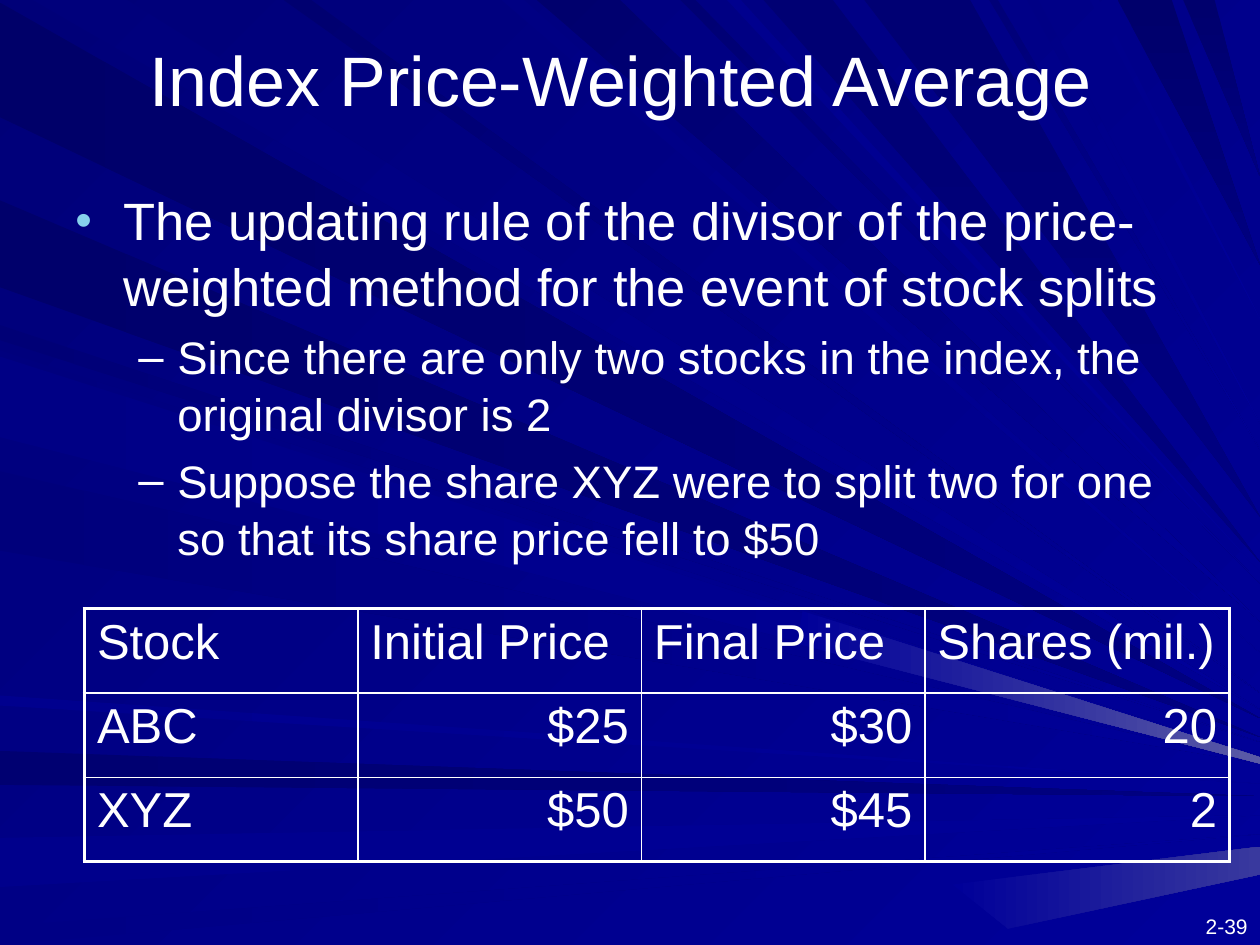
from lxml.etree import SubElement as Sub
from pptx import Presentation
from pptx.dml.color import RGBColor as RGB
from pptx.enum.text import MSO_ANCHOR as Anchor, PP_ALIGN as Align
from pptx.oxml.ns import qn
from pptx.util import Inches, Pt

WHITE, DEEP, BRIGHT = "FFFFFF", "000080", "000099"
WIDE, TALL = 10, 7.5
STEP = 100
BACK = ("000078", BRIGHT, 45)
TITLE = "Index Price-Weighted Average "
NUMBER = "2-39"
POINTS = [
    (0, "The updating rule of the divisor of the price-weighted method for the event of stock splits"),
    (1, "Since there are only two stocks in the index, the original divisor is 2"),
    (1, "Suppose the share XYZ were to split two for one so that its share price fell to $50"),
]
LEVELS = [
    dict(size=30, left=0.38, hang=0.38, mark="•", color="86D1EC", scale=90, gap=0),
    dict(size=26, left=0.81, hang=0.31, mark="–", color=WHITE, scale=100, gap=5.2),
]
STOCKS = [
    ("Stock", "Initial Price", "Final Price", "Shares (mil.)"),
    ("ABC", "$25", "$30", "20"),
    ("XYZ", "$50", "$45", "2"),
]
COLS = [2.17, 2.25, 2.25, 2.42]
ROW = 0.67
THICK, THIN = 2.25, 1

LEFT = [
    ("000069", DEEP, 0.02, 0.93, 5.7),
    ("000071", DEEP, 5.96, 6.23, 6.32),
    ("00008C", BRIGHT, 6.65, 7.04, 6.47),
    ("000085", BRIGHT, 7.35, 7.5, 6.62),
    ("000076", BRIGHT, 2.58, 2.7, 5.89),
    ("00006B", DEEP, 1.59, 2.28, 5.85),
    ("00007E", BRIGHT, 2.78, 3.42, 6),
    ("00007B", BRIGHT, 3.74, 4.37, 6.06),
    ("00008E", BRIGHT, 5.52, 5.6, 6.22),
    ("000085", BRIGHT, 2.83, 3.47, 6.03),
]
TOP = [
    ("00007B", BRIGHT, 0.26, 1.01, 5.63),
    ("000083", BRIGHT, 3.98, 4.16, 5.18),
    ("00006D", BRIGHT, 4.26, 4.92, 4.93),
    ("000073", BRIGHT, 5.4, 5.52, 4.63),
    ("000073", DEEP, 6.06, 6.61, 4.46),
    ("00006B", DEEP, 8.87, 9.3, 2.1),
    ("00006D", DEEP, 9.39, 9.64, 1.4),
    ("000070", BRIGHT, 2.25, 2.47, 5.5),
    ("00008E", BRIGHT, 5.77, 5.88, 4.54),
    ("000073", DEEP, 6.86, 7.7, 4.1),
    ("000078", BRIGHT, 7.85, 7.92, 3.57),
    ("000085", BRIGHT, 8.15, 8.24, 3.36),
    ("00008A", BRIGHT, 8.65, 8.72, 2.53),
]
FLARES = [
    ("39399E", [(7.56, 7.02), (10, 6.72), (10, 6.94), (8, 7.37)]),
    ("5A5AA6", [(6.37, 4.85), (10, 6.01), (10, 6.06), (6.33, 5.11)]),
]


def tint(hue):
    return RGB.from_string(hue)


def paint(fill, first, last, angle):
    fill.gradient()
    fill.gradient_angle = -angle % 360
    for stop, hue, place in zip(fill.gradient_stops, (first, last), (0, 1)):
        stop.color.rgb = tint(hue)
        stop.position = place


def style(para, size, **form):
    for key, val in form.items():
        setattr(para, key, val)
    for key, val in dict(name="Arial", size=Pt(size)).items():
        setattr(para.font, key, val)
    para.font.color.rgb = tint(WHITE)


def add_box(slide, *place):
    frame = slide.shapes.add_textbox(*map(Inches, place)).text_frame
    frame.word_wrap = True
    return frame


def add_mark(para, level):
    props = para._p.get_or_add_pPr()
    props.set("marL", str(Inches(level["left"])))
    props.set("indent", str(-Inches(level["hang"])))
    hue = Sub(props, qn("a:buClr"))
    Sub(hue, qn("a:srgbClr"), val=level["color"])
    Sub(props, qn("a:buSzPct"), val=str(level["scale"] * 1000))
    Sub(props, qn("a:buFont"), typeface="Arial")
    Sub(props, qn("a:buChar"), char=level["mark"])


def add_ray(slide, dots, *look):
    dots = [(x * STEP, y * STEP) for x, y in dots]
    path = slide.shapes.build_freeform(*dots[0], scale=Inches(1 / STEP))
    path.add_line_segments(dots[1:], close=True)
    ray = path.convert_to_shape()
    ray.shadow.inherit = False
    ray.line.fill.background()
    paint(ray.fill, *look)


def add_rays(slide):
    for first, last, near, far, tip in LEFT:
        add_ray(slide, [(0, near), (0, far), (WIDE, tip)], first, last, 0)
    for first, last, near, far, tip in TOP:
        angle = 90 if last == DEEP else 45
        add_ray(slide, [(near, 0), (far, 0), (WIDE, tip)], first, last, angle)
    for last, dots in FLARES:
        add_ray(slide, dots, BRIGHT, last, 0)


def add_text(slide):
    frame = add_box(slide, 9.42, 7.2, 0.58, 0.3)
    frame.text = NUMBER
    style(frame.paragraphs[0], 12, alignment=Align.RIGHT)

    frame = add_box(slide, 0.5, 0.08, 9, 1.08)
    frame.text = TITLE
    frame.vertical_anchor = Anchor.MIDDLE
    style(frame.paragraphs[0], 40, alignment=Align.CENTER)

    frame = add_box(slide, 0.5, 1.42, 9.17, 5.83)
    frame.text = "\n".join(text for _, text in POINTS)
    for para, (rank, _) in zip(frame.paragraphs, POINTS):
        level = LEVELS[rank]
        add_mark(para, level)
        style(para, level["size"], level=rank, line_spacing=1.05,
              space_before=Pt(level["gap"]))


def add_edges(cell, row, col):
    outer = dict(L=col == 0, R=col == len(COLS) - 1,
                 T=row == 0, B=row == len(STOCKS) - 1)
    props = cell._tc.get_or_add_tcPr()
    for side, edge in outer.items():
        line = Sub(props, qn("a:ln" + side), w=str(Pt(THICK if edge else THIN)))
        Sub(Sub(line, qn("a:solidFill")), qn("a:srgbClr"), val=WHITE)


def add_stocks(slide):
    size = (len(STOCKS), len(COLS))
    place = (0.67, 4.83, sum(COLS), ROW * len(STOCKS))
    table = slide.shapes.add_table(*size, *map(Inches, place)).table
    table.first_row = table.horz_banding = False
    for col, width in zip(table.columns, COLS):
        col.width = Inches(width)
    for r, texts in enumerate(STOCKS):
        table.rows[r].height = Inches(ROW)
        for c, text in enumerate(texts):
            cell = table.cell(r, c)
            cell.text = text
            side = Align.RIGHT if r and c else Align.LEFT
            style(cell.text_frame.paragraphs[0], 28, alignment=side)
            add_edges(cell, r, c)
            cell.fill.background()


def main():
    deck = Presentation()
    deck.slide_width, deck.slide_height = Inches(WIDE), Inches(TALL)
    slide = deck.slides.add_slide(deck.slide_layouts[6])
    paint(slide.background.fill, *BACK)
    add_rays(slide)
    add_text(slide)
    add_stocks(slide)
    deck.save("out.pptx")


if __name__ == "__main__":
    main()
